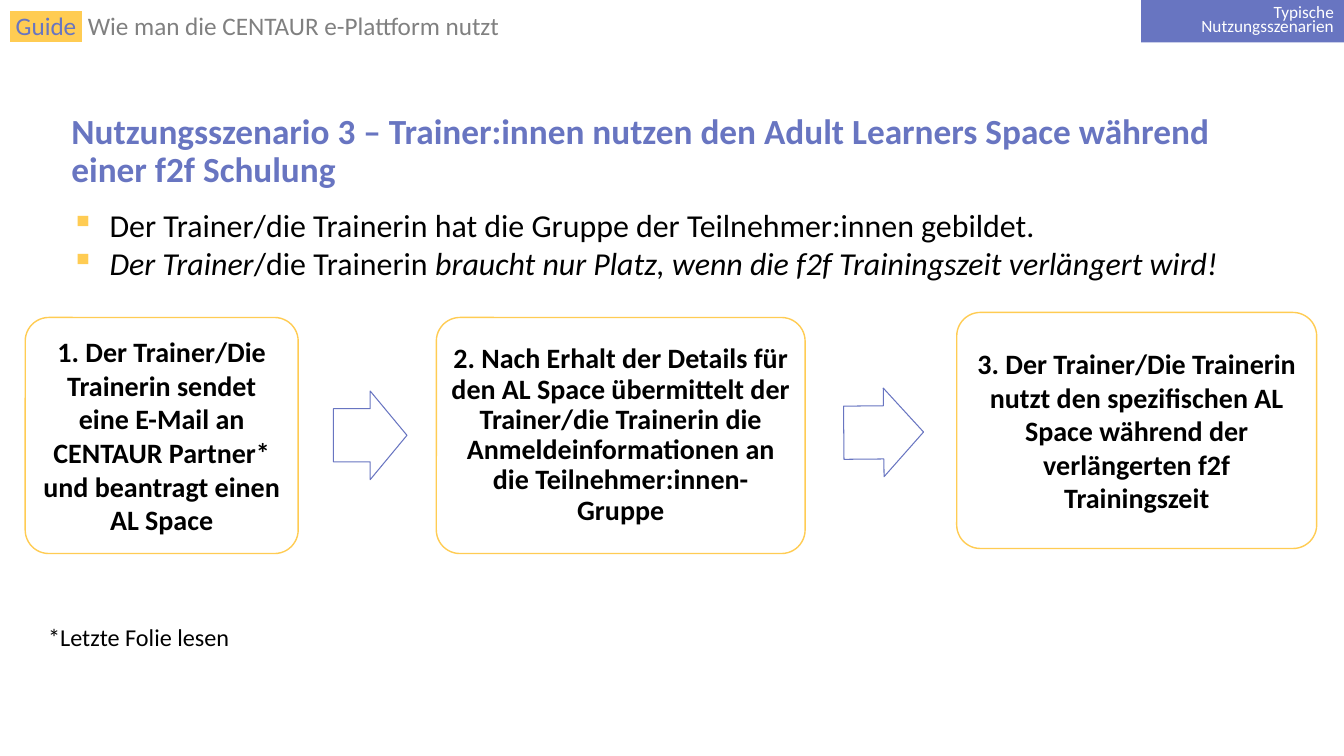
from lxml import etree
from pptx import Presentation
from pptx import util as u
from pptx.dml.color import RGBColor
from pptx.enum import shapes, text
from pptx.oxml import ns

PURPLE = RGBColor(0x68, 0x75, 0xC1)
YELLOW = RGBColor(0xFF, 0xCC, 0x53)
GREY = RGBColor(0x80, 0x80, 0x80)
BLACK = RGBColor(0, 0, 0)
WHITE = RGBColor(0xFF, 0xFF, 0xFF)

COLUMNS, ROWS = 32, 18
LEFT, CENTER, RIGHT = text.PP_ALIGN.LEFT, text.PP_ALIGN.CENTER, text.PP_ALIGN.RIGHT


class GuideSlide:
    """Holds the font, the grid and the slide being built."""

    font = "Calibri"

    def __init__(self, presentation):
        self.column = presentation.slide_width / COLUMNS
        self.row = presentation.slide_height / ROWS
        self.slide = presentation.slides.add_slide(presentation.slide_layouts[5])

    def place(self, left, top, width, height):
        return (round(left * self.column), round(top * self.row),
                round(width * self.column), round(height * self.row))

    def style(self, run, size, color, bold=False, italic=False):
        font = run.font
        font.name, font.size, font.bold, font.italic = self.font, u.Pt(size), bold, italic
        font.color.rgb = color

    def highlight(self, run, color):
        mark = etree.Element(ns.qn("a:highlight"))
        etree.SubElement(mark, ns.qn("a:srgbClr"), val=str(color))
        run._r.get_or_add_rPr().find(ns.qn("a:solidFill")).addnext(mark)

    def set_text(self, shape, content, size, color, align=LEFT, spacing=1.0,
                 anchor=text.MSO_ANCHOR.MIDDLE, bold=False):
        frame = shape.text_frame
        frame.word_wrap = True
        frame.vertical_anchor = anchor
        frame.text = content
        paragraph = frame.paragraphs[0]
        paragraph.alignment, paragraph.line_spacing = align, spacing
        self.style(paragraph.runs[0], size, color, bold)

    def title(self, grid, content):
        shape = self.slide.shapes.title
        shape.left, shape.top, shape.width, shape.height = self.place(*grid)
        shape.text_frame.auto_size = text.MSO_AUTO_SIZE.NONE
        self.set_text(shape, content, 25.2, PURPLE, spacing=0.9, bold=True)

    def textbox(self, grid):
        shape = self.slide.shapes.add_textbox(*self.place(*grid))
        shape.text_frame.word_wrap = True
        return shape

    def shape(self, kind, grid, fill=None, line=None, width=1.0):
        shape = self.slide.shapes.add_shape(kind, *self.place(*grid))
        shape.shadow.inherit = False
        if fill is None:
            shape.fill.background()
        else:
            shape.fill.solid()
            shape.fill.fore_color.rgb = fill
        if line is None:
            shape.line.fill.background()
        else:
            shape.line.color.rgb = line
            shape.line.width = u.Pt(width)
        return shape

    def step(self, grid, content, spacing):
        box = self.shape(shapes.MSO_SHAPE.ROUNDED_RECTANGLE, grid, line=YELLOW)
        box.adjustments[0] = 0.1
        frame = box.text_frame
        frame.margin_left = frame.margin_right = u.Inches(0.08)
        frame.margin_top = frame.margin_bottom = u.Inches(0.08)
        self.set_text(box, content, 20, BLACK, CENTER, spacing, bold=True)

    def arrow(self, grid, rotation):
        arrow = self.shape(shapes.MSO_SHAPE.RIGHT_ARROW, grid, line=PURPLE, width=0.75)
        arrow.adjustments[0], arrow.adjustments[1] = 0.6, 0.5
        arrow.rotation = rotation

    def header(self, grid, parts):
        paragraph = self.textbox(grid).text_frame.paragraphs[0]
        paragraph.line_spacing = 0.8
        for content, color, marked in parts:
            run = paragraph.add_run()
            run.text = content
            self.style(run, 18, color)
            if marked:
                self.highlight(run, YELLOW)

    def bullets(self, grid, items):
        frame = self.textbox(grid).text_frame
        for index, parts in enumerate(items):
            paragraph = frame.add_paragraph() if index else frame.paragraphs[0]
            properties = paragraph._p.get_or_add_pPr()
            indent = u.Inches(0.38)
            properties.set("marL", str(indent))
            properties.set("indent", str(-indent))
            color = etree.SubElement(properties, ns.qn("a:buClr"))
            etree.SubElement(color, ns.qn("a:srgbClr"), val=str(YELLOW))
            etree.SubElement(properties, ns.qn("a:buChar"), char="▪")
            for content, italic in parts:
                run = paragraph.add_run()
                run.text = content
                self.style(run, 22.8, BLACK, italic=italic)


def main():
    presentation = Presentation()
    presentation.slide_width, presentation.slide_height = u.Inches(13.33), u.Inches(7.5)
    guide = GuideSlide(presentation)

    # Header and title
    guide.header((0, 0.26, 22.85, 0.84), [
        (" ", WHITE, True), ("Guide", PURPLE, True), (" ", GREY, True),
        (" Wie man die CENTAUR e-Plattform nutzt", GREY, False)])
    guide.title((1.46, 2.83, 29.04, 1.58),
                "Nutzungsszenario 3 – Trainer:innen nutzen den Adult Learners Space "
                "während einer f2f Schulung")

    # Steps: left, top, width, line spacing, wording
    steps = [
        (0.6, 7.56, 6.5, 1.0, "1. Der Trainer/Die Trainerin sendet eine E-Mail an "
         "CENTAUR Partner* und beantragt einen AL Space"),
        (10.39, 7.56, 8.78, 0.9, "2. Nach Erhalt der Details für den AL Space übermittelt "
         "der Trainer/die Trainerin die Anmeldeinformationen an die Teilnehmer:innen-Gruppe"),
        (22.78, 7.44, 8.57, 1.0, "3. Der Trainer/Die Trainerin nutzt den spezifischen "
         "AL Space während der verlängerten f2f Trainingszeit"),
    ]
    for left, top, width, spacing, content in steps:
        guide.step((left, top, width, 5.62), content, spacing)

    # Arrows between the steps
    guide.arrow((7.94, 9.31, 1.75, 2.11), 0)
    guide.arrow((20.09, 9.24, 1.9, 2.11), 359.5)

    # Conditions
    guide.bullets((1.46, 4.78, 29.04, 2.18), [
        [("Der Trainer/die Trainerin hat die Gruppe der Teilnehmer:innen gebildet.", False)],
        [("Der Trainer", True), ("/die Trainerin ", False),
         ("braucht nur Platz, wenn die f2f Trainingszeit verlängert wird!", True)]])

    # Section tag and footnote
    tag = guide.shape(shapes.MSO_SHAPE.RECTANGLE, (27.17, 0, 4.83, 1.01), fill=PURPLE)
    guide.set_text(tag, "Typische Nutzungsszenarien", 12.3, WHITE, RIGHT, 0.7)
    guide.set_text(guide.textbox((0.91, 14.69, 16.1, 0.96)), "*Letzte Folie lesen",
                   17.3, BLACK, anchor=text.MSO_ANCHOR.TOP)

    presentation.save("out.pptx")


if __name__ == "__main__":
    main()
